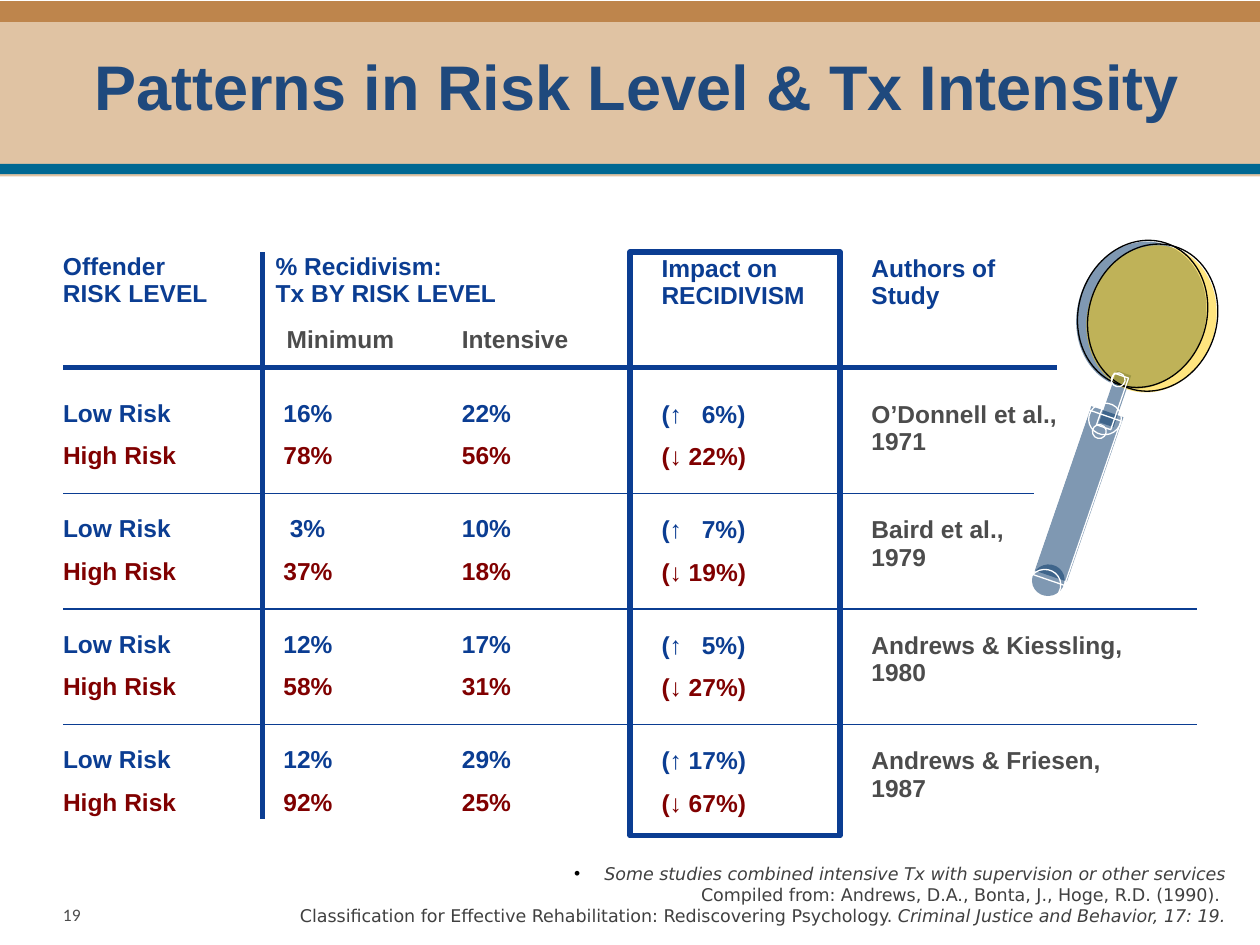
from lxml.etree import SubElement
from pptx import Presentation
from pptx.dml.color import RGBColor
from pptx.enum.shapes import MSO_CONNECTOR, MSO_SHAPE
from pptx.enum.text import MSO_ANCHOR, MSO_AUTO_SIZE, PP_ALIGN
from pptx.oxml.ns import qn
from pptx.util import Inches, Pt

BLUE, RED, GRAY = "0B3D92", "800000", "4C4C4C"
RECT, OVAL = MSO_SHAPE.RECTANGLE, MSO_SHAPE.OVAL

deck = Presentation()
deck.slide_width, deck.slide_height = Inches(10), Inches(7.5)
UNIT = deck.slide_width / 120  # grid of 120 columns by 90 rows

STUDIES = [
    # minimum, intensive, impact, authors
    (("16%", "78%"), ("22%", "56%"), ("(↑\t6%)", "(↓ 22%)"), "O’Donnell et al., \v1971"),
    (("3%", "37%"), ("10%", "18%"), ("(↑\t7%)", "(↓ 19%)"), "Baird et al., \v1979"),
    (("12%", "58%"), ("17%", "31%"), ("(↑\t5%)", "(↓ 27%)"), "Andrews & Kiessling, \v1980"),
    (("12%", "92%"), ("29%", "25%"), ("(↑ 17%)", "(↓ 67%)"), "Andrews & Friesen, \v1987"),
]
RULES = [98.5, 114, 114]  # right ends of the lines between studies


def grid(*cells):
    return [round(cell * UNIT) for cell in cells]


def color(code):
    return RGBColor.from_string(code)


def shape(parent, kind, box, fill=None, line=None, width=0.75, turn=0, alpha=None):
    item = parent.add_shape(kind, *grid(*box))
    item.shadow.inherit = False
    item.rotation = turn
    if fill:
        item.fill.solid()
        item.fill.fore_color.rgb = color(fill)
        if alpha:
            tint = item.fill._xPr.find(qn("a:solidFill"))[0]
            SubElement(tint, qn("a:alpha"), val=str(alpha * 1000))
    else:
        item.fill.background()
    if line:
        item.line.color.rgb = color(line)
        item.line.width = Pt(width)
    else:
        item.line.fill.background()
    return item


def rule(shapes, start, end, width):
    line = shapes.add_connector(MSO_CONNECTOR.STRAIGHT, *grid(*start, *end))
    line.line.color.rgb = color(BLUE)
    line.line.width = Pt(width)
    SubElement(line._element.spPr, qn("a:effectLst"))


def setup(frame, inset=0.01, wrap=True):
    frame.margin_left = frame.margin_right = frame.margin_bottom = 0
    frame.margin_top = Inches(inset)
    frame.word_wrap = wrap
    frame.auto_size = MSO_AUTO_SIZE.NONE
    frame.vertical_anchor = MSO_ANCHOR.TOP


def style(para, size, name, tone, bold=False):
    font = para.font
    font.size, font.name, font.bold = Pt(size), name, bold
    font.color.rgb = color(tone)


def label(shapes, box, lines, tones=(BLUE,), size=14, name="Arial", bold=True, wrap=True):
    """Text box with one paragraph and one colour per line."""
    frame = shapes.add_textbox(*grid(*box)).text_frame
    setup(frame, wrap=wrap)
    for i, (text, tone) in enumerate(zip(lines, tones)):
        para = frame.add_paragraph() if i else frame.paragraphs[0]
        para.text = text
        para.line_spacing = 0.93
        if i:
            para.space_before = Pt(8.8)
        props = para._p.get_or_add_pPr()
        if "\t" in text:
            tabs = SubElement(props, qn("a:tabLst"))
            SubElement(tabs, qn("a:tab"), pos=str(Inches(0.32)), algn="l")
        if text == "3%":
            props.set("marL", str(Inches(0.05)))
        style(para, size, name, tone, bold)


def banner(slide, box):
    x, y, w, h = box
    shapes = slide.shapes
    shape(shapes, RECT, (x, y + 1.8, w, h - 1.8), "E0C3A3")
    shape(shapes, RECT, (x, y + 15.5, w, 1), "006892")
    shape(shapes, RECT, (x, y, w, 2), "BE854C")
    title = shapes.title
    shapes._spTree.append(title._element)
    title.left, title.top, title.width, title.height = grid(x + 9, y + 4.7, w - 9, 7.1)
    title.text = "Patterns in Risk Level & Tx Intensity"
    setup(title.text_frame, 0.03)
    para = title.text_frame.paragraphs[0]
    para.alignment, para.line_spacing = PP_ALIGN.LEFT, 0.93
    style(para, 36, "Arial", "1F497D", True)


def lens(shapes, box):
    """Magnifying glass: tinted parts, then their outlines."""
    x, y, w, h = box
    group = shapes.add_group_shape().shapes
    disc, grip, neck = (0.66 * w, 0.415 * h), (3.24, 16.56), (1.44, 5.2)
    knob, bead = (3.12, 3), (1.32, 1.32)
    tints = [
        (RECT, 7.5, 12.9, neck, 19, "003366"),
        (RECT, 3.16, 16.26, grip, 19, "003366"),
        (OVAL, 4.6, 0.42, disc, 18, "003366"),
        (OVAL, 5.56, 0.78, disc, 18, "FFCC00"),
        (OVAL, 0.28, 31.26, knob, -18, "003366"),
    ]
    edges = [
        (OVAL, 4.72, 0.3, disc, 18, "000000"),
        (OVAL, 5.68, 0.66, disc, 18, "000000"),
        (RECT, 7.24, 13.14, neck, 19, "FFFFFF"),
        (RECT, 2.92, 16.62, grip, 19, "FFFFFF"),
        (OVAL, -0.08, 31.74, knob, -18, "FFFFFF"),
        (OVAL, 5.68, 15.9, knob, -18, "FFFFFF"),
        (OVAL, 6.04, 17.94, bead, -18, "FFFFFF"),
        (OVAL, 7.84, 13.02, bead, -18, "FFFFFF"),
    ]
    for kind, dx, dy, size, turn, tone in tints:
        shape(group, kind, (x + dx, y + dy, *size), tone, turn=turn, alpha=50)
    for kind, dx, dy, size, turn, tone in edges:
        shape(group, kind, (x + dx, y + dy, *size), line=tone, turn=turn)


def heads(shapes, x, y):
    label(shapes, (x, y, 17, 5.4), ["Offender \vRISK LEVEL"])
    label(shapes, (x + 20.25, y, 26, 5.4), ["% Recidivism: \vTx BY RISK LEVEL"])
    label(shapes, (x + 57, y + 0.2, 15, 5.4), ["Impact on \vRECIDIVISM"])
    label(shapes, (x + 77, y + 0.2, 20.4, 5.4), ["Authors of \vStudy"])
    label(shapes, (x + 21.3, y + 7, 13.7, 2.8), ["Minimum"], [GRAY])
    label(shapes, (x + 38, y + 7, 19, 2.8), ["Intensive"], [GRAY])


def study(shapes, x, y, data):
    least, most, impact, author = data
    pair = (BLUE, RED)
    label(shapes, (x, y, 16, 6.8), ("Low Risk", "High Risk"), pair)
    label(shapes, (x + 21, y, 12, 6.8), least, pair)
    label(shapes, (x + 38, y, 13, 6.8), most, pair)
    label(shapes, (x + 57, y + 0.1, 15, 6.8), impact, pair)
    label(shapes, (x + 77, y + 0.1, 31, 5.4), [author], [GRAY])


def findings(shapes, box):
    x, y, w, h = box
    heads(shapes, x, y)
    for i, data in enumerate(STUDIES):
        study(shapes, x, y + 14 + 11 * i, data)
    shape(shapes, RECT, (x + 54, y, 20, h), line=BLUE, width=3)
    rule(shapes, (x, y + 11), (x + 94.7, y + 11), 3)
    for i, end in enumerate(RULES):
        rule(shapes, (x, y + 23 + 11 * i), (end, y + 23 + 11 * i), 1)
    rule(shapes, (x + 19, y), (x + 19, y + 54), 3)


def credits(shapes, box):
    frame = shapes.add_textbox(*grid(*box)).text_frame
    setup(frame, 0)
    lines = [
        [("Some studies combined intensive Tx with supervision or other services", True)],
        [("Compiled from: Andrews, D.A., Bonta, J., Hoge, R.D. (1990). ", False)],
        [("Classification for Effective Rehabilitation: Rediscovering Psychology.", False),
         (" Criminal Justice and Behavior, 17: 19.", True)],
    ]
    for i, runs in enumerate(lines):
        para = frame.add_paragraph() if i else frame.paragraphs[0]
        para.alignment = PP_ALIGN.RIGHT
        if not i:
            props = para._p.get_or_add_pPr()
            props.set("marL", str(Inches(0.24)))
            props.set("indent", str(-Inches(0.24)))
            SubElement(SubElement(props, qn("a:buClr")), qn("a:srgbClr"), val="000000")
            SubElement(props, qn("a:buFont"), typeface="Arial")
            SubElement(props, qn("a:buChar"), char="•")
        style(para, 10, "DejaVu Sans", "404040")
        for text, slant in runs:
            run = para.add_run()
            run.text, run.font.italic = text, slant


def main():
    slide = deck.slides.add_slide(deck.slide_layouts[5])
    shapes = slide.shapes
    banner(slide, (0, 0.1, 120, 16.7))
    lens(shapes, (98, 22.5, 18.5, 34.2))
    findings(shapes, (6, 24, 108, 55.6))
    credits(shapes, (7.9, 82.2, 108.8, 6))
    label(shapes, (6, 86.2, 7, 2), ["19"], [GRAY], 10, "Calibri", False, False)
    deck.save("out.pptx")


if __name__ == "__main__":
    main()
